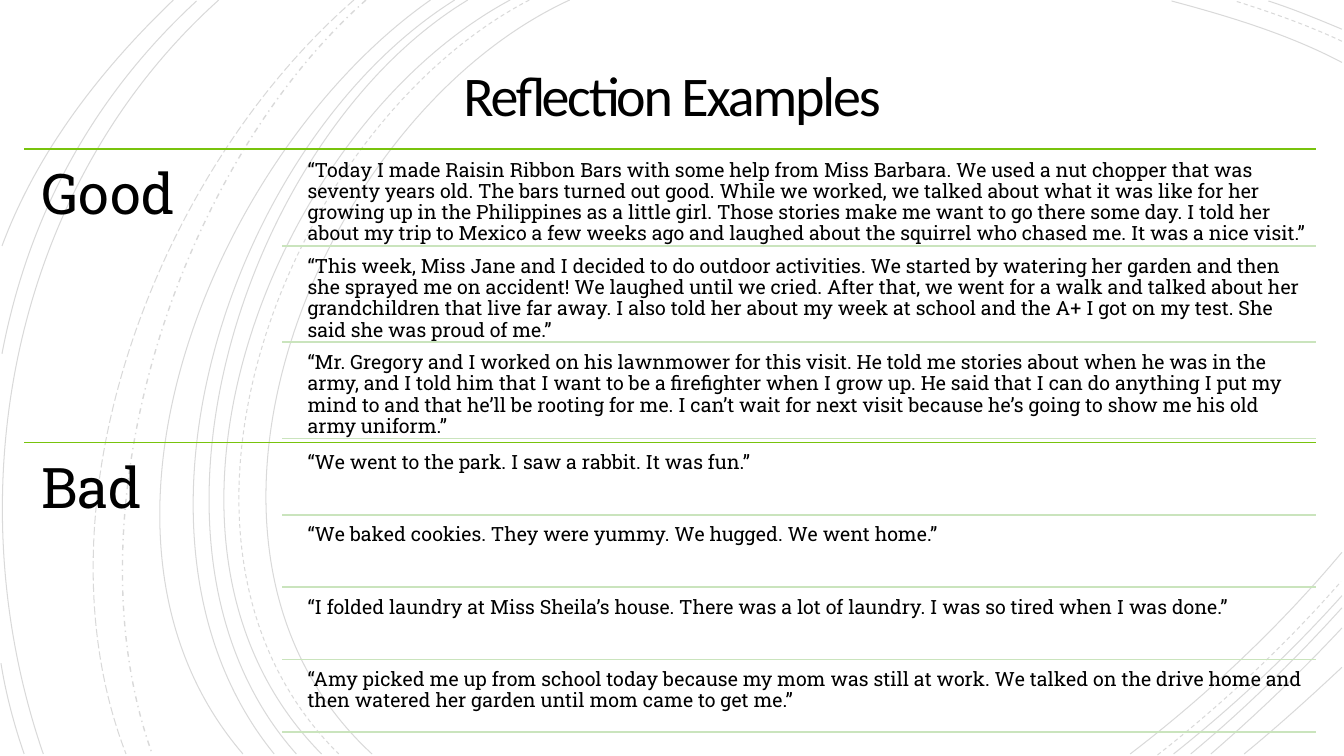
from dataclasses import dataclass

import lxml.etree
import pptx
import pptx.dml.color
import pptx.enum.dml
import pptx.enum.shapes
import pptx.enum.text
import pptx.oxml.ns
import pptx.util

Inches = pptx.util.Inches
Pt = pptx.util.Pt
qn = pptx.oxml.ns.qn
Dash = pptx.enum.dml.MSO_LINE

BLACK = pptx.dml.color.RGBColor(0x00, 0x00, 0x00)
GREEN = pptx.dml.color.RGBColor(0x78, 0xC3, 0x0D)
PALE_GREEN = pptx.dml.color.RGBColor(0xCA, 0xE4, 0xBD)

TITLE_FONT = "Calibri"
BODY_FONT = "Roboto Slab"
LEFT, ROW_LEFT, RIGHT = 0.24, 2.8, 13.05
LABEL_W, LABEL_H = 2.56, 2.91
QUOTE_LEFT, QUOTE_W = 2.99, 10.05


@dataclass
class Arc:
    """Cubic curve: start, two control points, end."""
    points: list[tuple[float, float]]
    dash: Dash = Dash.SOLID
    width: float = 0.75


@dataclass
class Section:
    label: str
    top: float
    first_row: float
    last_row: float
    row_h: float
    quotes: list[str]


ARCS = [
    # Left side, running down the slide
    Arc([(5.65, 0), (3.15, 1.15), (1.43, 5.4), (3.69, 7.48)]),
    Arc([(5.25, 0), (2.85, 1.25), (1.23, 5.37), (3.36, 7.48)], Dash.DASH),
    Arc([(5.06, 0), (2.7, 1.27), (1.1, 5.37), (3.19, 7.48)]),
    Arc([(4.64, 0), (2.44, 1.33), (1.1, 5.41), (2.94, 7.48)]),
    Arc([(4.51, 0), (2.31, 1.38), (0.97, 5.33), (2.72, 7.48)]),
    Arc([(4.27, 0), (2.17, 1.47), (0.53, 5.29), (2.41, 7.48)]),
    Arc([(3.63, 0), (1.76, 1.66), (0.65, 5.09), (1.51, 7.48)], Dash.DASH_DOT, 1),
    Arc([(3.51, 0), (1.57, 1.69), (0.29, 4.99), (1.25, 7.48)], Dash.LONG_DASH),
    Arc([(2.17, 0), (0.11, 1.85), (-0.46, 4.9), (0.43, 7.48)]),
    Arc([(1.95, 0.01), (0.92, 0.96), (0.28, 2.14), (0.02, 3.51)]),
    Arc([(0.01, 6.58), (0.06, 6.89), (0.14, 7.19), (0.24, 7.48)]),
    Arc([(1.72, 0), (1, 0.69), (0.37, 1.5), (0.02, 2.44)]),
    # Top right corner
    Arc([(13.31, 0.62), (12.78, 0.34), (12.18, 0.16), (11.62, 0.01)]),
    Arc([(13.31, 0.41), (12.97, 0.25), (12.6, 0.12), (12.25, 0.01)], Dash.DASH),
    Arc([(13.31, 0.29), (13.07, 0.19), (12.83, 0.09), (12.58, 0.01)]),
    # Bottom right corner
    Arc([(11.21, 7.48), (11.97, 6.9), (12.69, 6.22), (13.31, 5.48)]),
    Arc([(11.48, 7.49), (12.13, 6.98), (12.75, 6.4), (13.3, 5.77)], Dash.DASH),
    Arc([(11.64, 7.48), (12.23, 7.01), (12.8, 6.48), (13.31, 5.91)]),
    Arc([(11.81, 7.48), (12.34, 7.04), (12.84, 6.55), (13.31, 6.03)]),
    Arc([(12.01, 7.48), (12.46, 7.09), (12.9, 6.67), (13.31, 6.23)]),
    Arc([(12.34, 7.48), (12.67, 7.21), (12.99, 6.92), (13.31, 6.62)]),
]

SECTIONS = [
    Section("Good", 1.48, 1.53, 3.44, 0.91, [
        "“Today I made Raisin Ribbon Bars with some help from Miss Barbara. We used a nut chopper "
        "that was seventy years old. The bars turned out good. While we worked, we talked about "
        "what it was like for her growing up in the Philippines as a little girl. Those stories "
        "make me want to go there some day. I told her about my trip to Mexico a few weeks ago "
        "and laughed about the squirrel who chased me. It was a nice visit.”",
        "“This week, Miss Jane and I decided to do outdoor activities. We started by watering her "
        "garden and then she sprayed me on accident! We laughed until we cried. After that, we "
        "went for a walk and talked about her grandchildren that live far away. I also told her "
        "about my week at school and the A+ I got on my test. She said she was proud of me.”",
        "“Mr. Gregory and I worked on his lawnmower for this visit. He told me stories about when "
        "he was in the army, and I told him that I want to be a firefighter when I grow up. He "
        "said that I can do anything I put my mind to and that he’ll be rooting for me. I can’t "
        "wait for next visit because he’s going to show me his old army uniform.”",
    ]),
    Section("Bad", 4.39, 4.43, 6.58, 0.68, [
        "“We went to the park. I saw a rabbit. It was fun.”",
        "“We baked cookies. They were yummy. We hugged. We went home.”",
        "“I folded laundry at Miss Sheila’s house. There was a lot of laundry. I was so tired "
        "when I was done.”",
        "“Amy picked me up from school today because my mom was still at work. We talked on the "
        "drive home and then watered her garden until mom came to get me.”",
    ]),
]


def add_arc(shapes, arc: Arc) -> None:
    start, *rest = [(Inches(x), Inches(y)) for x, y in arc.points]
    builder = shapes.build_freeform(*start)
    builder.add_line_segments(rest, close=False)
    sp = builder.convert_to_shape()
    sp.shadow.inherit = False
    sp.fill.background()
    sp.line.color.rgb = BLACK
    sp.line.width = Pt(arc.width)
    sp.line.dash_style = arc.dash
    # Line transparency
    color = next(sp.element.iter(qn("a:ln"))).find(".//" + qn("a:srgbClr"))
    lxml.etree.SubElement(color, qn("a:alpha")).set("val", "15000")
    # Turn the three segments into one cubic curve
    outline = next(sp.element.iter(qn("a:path")))
    curve = lxml.etree.SubElement(outline, qn("a:cubicBezTo"))
    for segment in outline.findall(qn("a:lnTo")):
        curve.append(segment[0])
        outline.remove(segment)


def add_rule(shapes, left: float, y: float, color: pptx.dml.color.RGBColor) -> None:
    line = shapes.add_connector(pptx.enum.shapes.MSO_CONNECTOR.STRAIGHT,
                                Inches(left), Inches(y), Inches(RIGHT), Inches(y))
    line.line.color.rgb = color
    line.line.width = Pt(1.25)
    lxml.etree.SubElement(line.element.spPr, qn("a:effectLst"))


def write_text(sp, text: str, size: float, font: str, inset: float, spacing: float):
    tf = sp.text_frame
    tf.word_wrap = True
    tf.auto_size = pptx.enum.text.MSO_AUTO_SIZE.NONE
    tf.margin_left = tf.margin_right = tf.margin_top = tf.margin_bottom = Inches(inset)
    p = tf.paragraphs[0]
    p.line_spacing = spacing
    r = p.add_run()
    r.text = text
    r.font.size = Pt(size)
    r.font.name = font
    r.font.color.rgb = BLACK
    return p


def add_text(shapes, left: float, top: float, width: float, height: float,
             text: str, size: float, inset: float) -> None:
    sp = shapes.add_textbox(Inches(left), Inches(top), Inches(width), Inches(height))
    write_text(sp, text, size, BODY_FONT, inset, 0.9)


def add_section(shapes, section: Section) -> None:
    add_rule(shapes, LEFT, section.top, GREEN)
    add_text(shapes, LEFT, section.top, LABEL_W, LABEL_H, section.label, 40, 0.17)
    pitch = (section.last_row - section.first_row) / (len(section.quotes) - 1)
    for i, quote in enumerate(section.quotes):
        top = section.first_row + i * pitch
        add_text(shapes, QUOTE_LEFT, top, QUOTE_W, section.row_h, quote, 14, 0.06)
        add_rule(shapes, ROW_LEFT, top + section.row_h, PALE_GREEN)


def main() -> None:
    prs = pptx.Presentation()
    prs.slide_width, prs.slide_height = Inches(13.33), Inches(7.5)
    s = prs.slides.add_slide(prs.slide_layouts[5])

    # Title
    title = s.shapes.title
    title.left, title.top = Inches(1.92), Inches(0.41)
    title.width, title.height = Inches(9.49), Inches(1.15)
    p = write_text(title, "Reflection Examples", 40, TITLE_FONT, 0.25, 0.85)
    p.alignment = pptx.enum.text.PP_ALIGN.CENTER
    title.text_frame.vertical_anchor = pptx.enum.text.MSO_ANCHOR.MIDDLE
    next(title.element.iter(qn("a:rPr"))).set("spc", "-150")

    # Background arcs, behind the title
    arcs = s.shapes.add_group_shape()
    for arc in ARCS:
        add_arc(arcs.shapes, arc)
    title.element.addprevious(arcs.element)

    # Good and bad examples
    for section in SECTIONS:
        add_section(s.shapes, section)

    prs.save("out.pptx")


if __name__ == "__main__":
    main()
